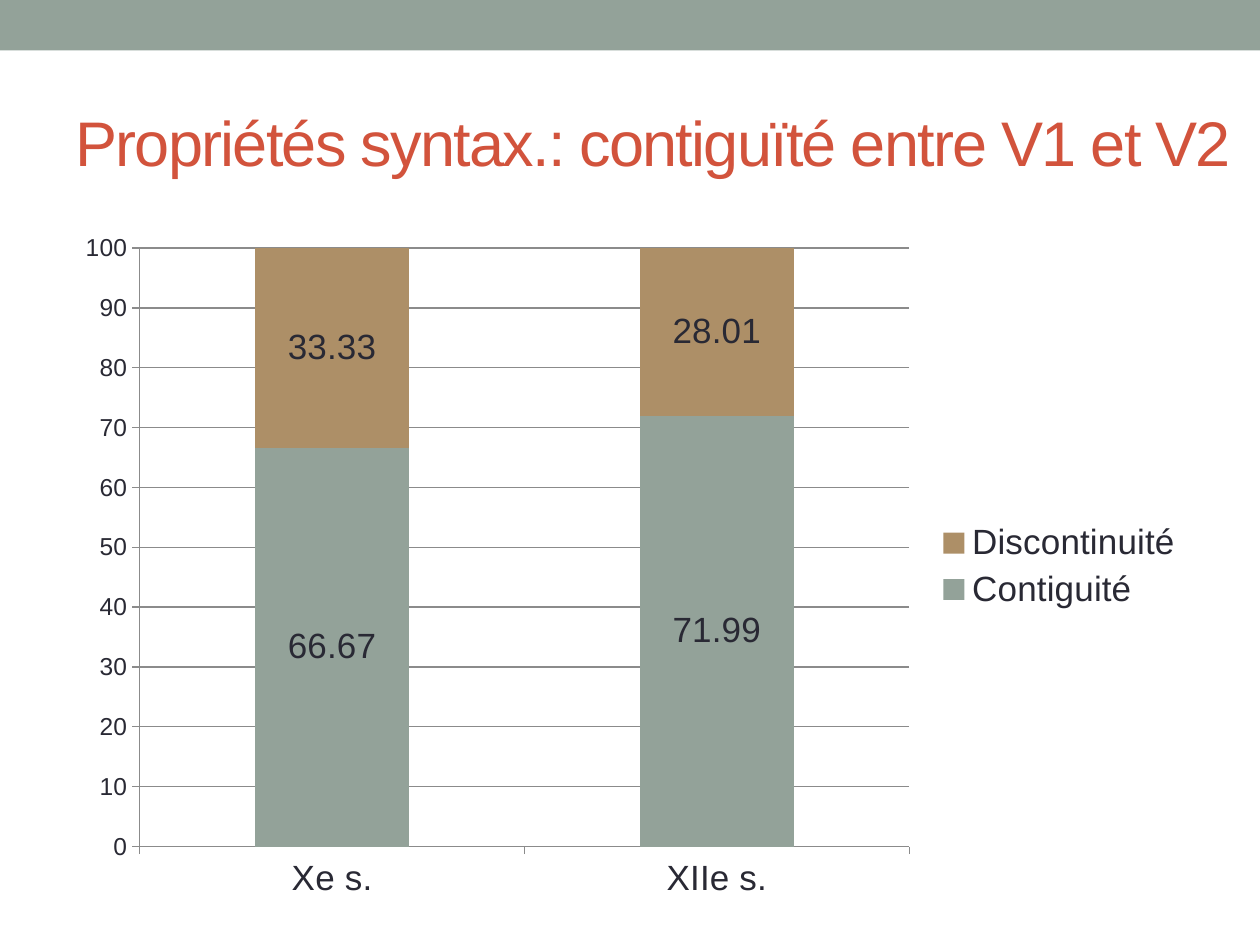
from dataclasses import dataclass

from pptx import Presentation
from pptx.chart.data import CategoryChartData
from pptx.dml.color import RGBColor
from pptx.enum.chart import XL_CHART_TYPE as ChartType, XL_LABEL_POSITION as LabelPos
from pptx.enum.chart import XL_LEGEND_POSITION as LegendPos, XL_TICK_MARK as Tick
from pptx.enum.shapes import MSO_SHAPE as Shape
from pptx.enum.text import MSO_ANCHOR as Anchor
from pptx.util import Inches, Pt

SAGE = RGBColor(0x93, 0xA2, 0x99)
TAN = RGBColor(0xAD, 0x8F, 0x67)
RUST = RGBColor(0xD2, 0x53, 0x3C)
INK = RGBColor(0x29, 0x29, 0x34)
GRAY = RGBColor(0x8B, 0x8B, 0x8B)
FONT = "Arial"
WIDTH, HEIGHT = Inches(10), Inches(7.5)


@dataclass
class Part:
    name: str
    values: tuple[float, ...]
    color: RGBColor


PARTS = (
    Part("Contiguité", (66.67, 71.99), SAGE),
    Part("Discontinuité", (33.33, 28.01), TAN),
)


def box(x: float, y: float, w: float, h: float) -> tuple[int, ...]:
    """Turn shares of the slide's size into lengths."""
    return int(x * WIDTH), int(y * HEIGHT), int(w * WIDTH), int(h * HEIGHT)


def style(font, size: int, color: RGBColor = INK) -> None:
    """Set a font's face, size and colour."""
    for key, value in {"name": FONT, "size": Pt(size), "bold": False}.items():
        setattr(font, key, value)
    font.color.rgb = color


def add_band(s) -> None:
    """Draw the band along the top edge."""
    sp = s.shapes.add_shape(Shape.RECTANGLE, *box(0, 0, 1, 0.4 / 7.5))
    sp.shadow.inherit = False
    sp.fill.solid()
    sp.fill.fore_color.rgb = SAGE
    sp.line.fill.background()


def add_title(s, text: str) -> None:
    """Write the slide's heading."""
    tf = s.shapes.add_textbox(*box(0.05, 0.58 / 7.5, 0.95, 0.144)).text_frame
    for key, value in {"word_wrap": True, "vertical_anchor": Anchor.MIDDLE}.items():
        setattr(tf, key, value)
    r = tf.paragraphs[0].add_run()
    r.text = text
    style(r.font, 36, RUST)
    r.font._element.set("spc", "-100")


def add_stacked_chart(s, categories: tuple[str, ...], parts: tuple[Part, ...]) -> None:
    """Draw the parts as labelled stacked columns."""
    data = CategoryChartData()
    data.categories = categories
    for part in parts:
        data.add_series(part.name, part.values)
    chart = s.shapes.add_chart(
        ChartType.COLUMN_STACKED, *box(0.05, 1.75 / 7.5, 0.9, 0.732), data
    ).chart
    chart.has_title = False
    style(chart.font, 10)

    plot = chart.plots[0]
    for key, value in {"gap_width": 150, "overlap": 100, "vary_by_categories": False}.items():
        setattr(plot, key, value)
    for part, series in zip(parts, plot.series):
        series.format.fill.solid()
        series.format.fill.fore_color.rgb = part.color
        labels = series.data_labels
        for key, value in {"show_value": True, "position": LabelPos.CENTER}.items():
            setattr(labels, key, value)
        style(labels.font, 20)

    value_axis = chart.value_axis
    scale = {"minimum_scale": 0, "maximum_scale": 100, "major_unit": 10,
             "has_major_gridlines": True}
    for key, value in scale.items():
        setattr(value_axis, key, value)
    for axis, size in ((chart.category_axis, 20), (value_axis, 14)):
        axis.major_tick_mark = Tick.OUTSIDE
        style(axis.tick_labels.font, size)
    for item in (chart.category_axis, value_axis, value_axis.major_gridlines):
        item.format.line.color.rgb = GRAY
        item.format.line.width = Pt(0.75)

    chart.has_legend = True
    for key, value in {"position": LegendPos.RIGHT, "include_in_layout": False}.items():
        setattr(chart.legend, key, value)
    style(chart.legend.font, 20)


def main() -> None:
    """Build the slide and save it."""
    prs = Presentation()
    prs.slide_width, prs.slide_height = WIDTH, HEIGHT
    s = prs.slides.add_slide(prs.slide_layouts[6])
    add_band(s)
    add_title(s, "Propriétés syntax.: contiguïté entre V1 et V2")
    add_stacked_chart(s, ("Xe s.", "XIIe s."), PARTS)
    prs.save("out.pptx")


if __name__ == "__main__":
    main()
